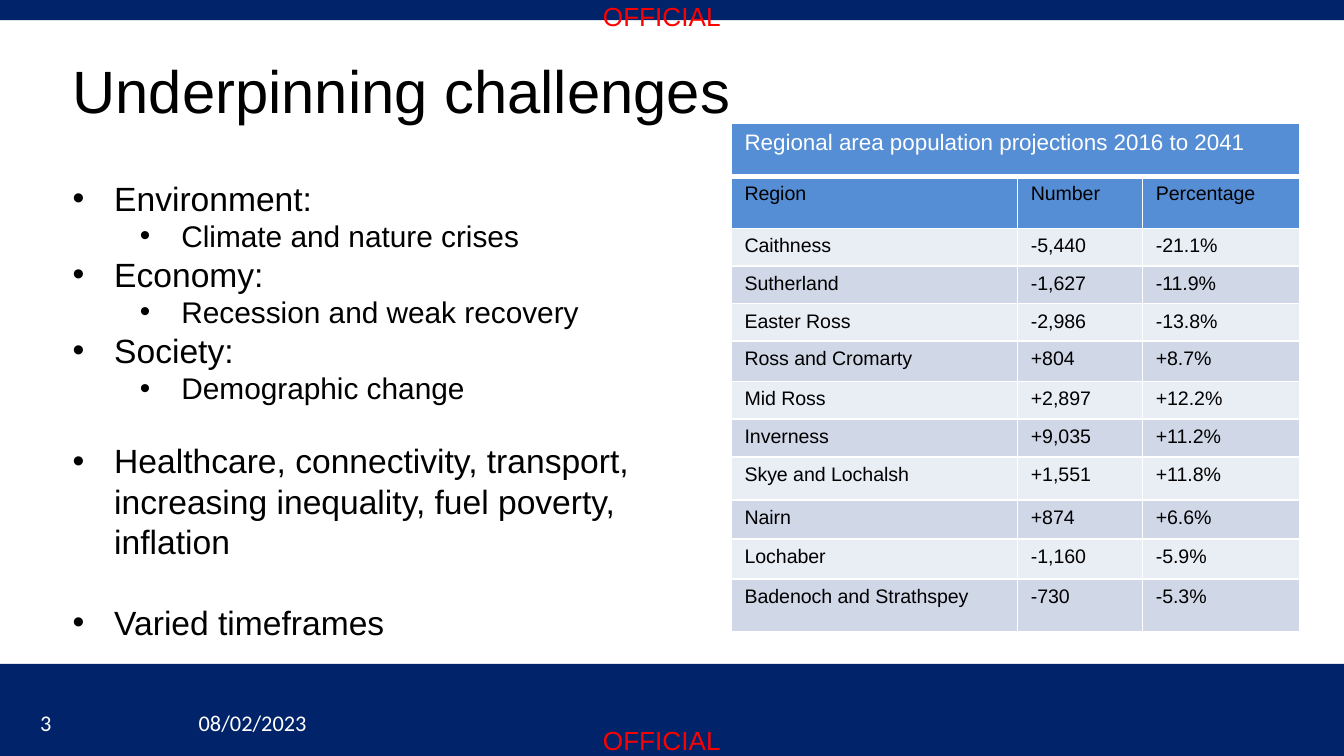
from lxml.etree import SubElement
from pptx import Presentation
from pptx.dml.color import RGBColor
from pptx.enum.shapes import MSO_SHAPE as Shape
from pptx.enum.text import MSO_ANCHOR as Anchor, MSO_AUTO_SIZE as AutoSize, PP_ALIGN as Align
from pptx.oxml.ns import qn
from pptx.util import Inches, Pt

COLORS = {
    "navy": "012369",
    "white": "FFFFFF",
    "black": "000000",
    "red": "FF0000",
    "header": "558ED5",
    "light": "E9EDF4",
    "dark": "D0D8E8",
}
BULLETS = [
    ("Environment:", 0, 0),
    ("Climate and nature crises", 1, 0),
    ("Economy:", 0, 0),
    ("Recession and weak recovery", 1, 0),
    ("Society:", 0, 0),
    ("Demographic change", 1, 0),
    ("Healthcare, connectivity, transport, increasing inequality, fuel poverty, inflation", 0, 18.5),
    ("Varied timeframes", 0, 21.5),
]
TABLE_TITLE = "Regional area population projections 2016 to 2041"
REGIONS = [
    ("Region", "Number", "Percentage"),
    ("Caithness", "-5,440", "-21.1%"),
    ("Sutherland", "-1,627", "-11.9%"),
    ("Easter Ross", "-2,986", "-13.8%"),
    ("Ross and Cromarty", "+804", "+8.7%"),
    ("Mid Ross", "+2,897", "+12.2%"),
    ("Inverness", "+9,035", "+11.2%"),
    ("Skye and Lochalsh", "+1,551", "+11.8%"),
    ("Nairn", "+874", "+6.6%"),
    ("Lochaber", "-1,160", "-5.9%"),
    ("Badenoch and Strathspey", "-730", "-5.3%"),
]
COLUMN_WIDTHS = [2.13, 0.93, 1.17]
ROW_HEIGHTS = [0.39, 0.39, 0.28, 0.28, 0.28, 0.3, 0.28, 0.28, 0.32, 0.29, 0.3, 0.39]


def rgb(name):
    return RGBColor.from_string(COLORS[name])


def write(para, text, size=18, font="Arial", color="black", align=Align.LEFT):
    para.alignment = align
    span = para.add_run()
    span.text = text
    span.font.size = Pt(size)
    span.font.name = font
    span.font.color.rgb = rgb(color)


def add_band(slide, top, height, color):
    band = slide.shapes.add_shape(Shape.RECTANGLE, 0, Inches(top), Inches(10), Inches(height))
    band.shadow.inherit = False
    band.fill.solid()
    band.fill.fore_color.rgb = rgb(color)
    band.line.fill.background()


def add_label(slide, text, left, top, width, height, inset=True, **style):
    box = slide.shapes.add_textbox(Inches(left), Inches(top), Inches(width), Inches(height))
    frame = box.text_frame
    frame.word_wrap = True
    if not inset:
        frame.margin_left = frame.margin_right = frame.margin_top = frame.margin_bottom = 0
    write(frame.paragraphs[0], text, **style)


def place(slide, holder, left, top, width, height):
    slide.shapes._spTree.append(holder._element)
    holder.left, holder.top = Inches(left), Inches(top)
    holder.width, holder.height = Inches(width), Inches(height)
    frame = holder.text_frame
    frame.word_wrap = True
    frame.auto_size = AutoSize.NONE
    frame.vertical_anchor = Anchor.TOP
    return frame


def add_bullet(para, text, level, gap):
    para.level = level
    para.line_spacing = 1.0
    para.space_before = Pt(gap)
    props = para._p.get_or_add_pPr()
    props.set("marL", str(Inches(0.31 + 0.5 * level)))
    props.set("indent", str(-Inches(0.31)))
    SubElement(props, qn("a:buFont"), typeface="Arial")
    SubElement(props, qn("a:buChar"), char="•")
    write(para, text, size=16 if level else 18)


def set_borders(cell, top=1, bottom=1):
    props = cell._tc.get_or_add_tcPr()
    for side, width in (("L", 1), ("R", 1), ("T", top), ("B", bottom)):
        line = SubElement(props, qn(f"a:ln{side}"), w=str(Pt(width)))
        fill = SubElement(line, qn("a:solidFill"))
        SubElement(fill, qn("a:srgbClr"), val=COLORS["white"])


def fill_cell(cell, text, fill, top=1, bottom=1, **style):
    set_borders(cell, top, bottom)
    cell.fill.solid()
    cell.fill.fore_color.rgb = rgb(fill)
    if text:
        write(cell.text_frame.paragraphs[0], text, **style)


def add_population_table(slide):
    table = slide.shapes.add_table(
        len(ROW_HEIGHTS), len(COLUMN_WIDTHS), Inches(5.44), Inches(0.92),
        Inches(sum(COLUMN_WIDTHS)), Inches(sum(ROW_HEIGHTS))).table
    for column, width in zip(table.columns, COLUMN_WIDTHS):
        column.width = Inches(width)
    for row, height in zip(table.rows, ROW_HEIGHTS):
        row.height = Inches(height)
    table.cell(0, 0).merge(table.cell(0, 2))
    for c, text in enumerate((TABLE_TITLE, "", "")):
        fill_cell(table.cell(0, c), text, "header", bottom=3, size=12, color="white")
    for r, values in enumerate(REGIONS, 1):
        fill = "header" if r == 1 else ("light", "dark")[r % 2]
        for c, text in enumerate(values):
            fill_cell(table.cell(r, c), text, fill, top=3 if r == 1 else 1, size=10.5)


def main():
    deck = Presentation()
    deck.slide_width = Inches(10)
    deck.slide_height = deck.slide_width * 9 // 16
    slide = deck.slides.add_slide(deck.slide_layouts[1])
    title, body = slide.placeholders

    add_band(slide, 4.94, 0.69, "navy")
    add_band(slide, 0, 1.28, "white")
    add_band(slide, 0, 0.15, "navy")
    for top in (0, 5.39):
        add_label(slide, "OFFICIAL", 4.46, top, 0.93, 0.23, inset=False,
                  size=14, color="red", align=Align.CENTER)
    for text, left, width in (("08/02/2023", 1.38, 1.26), ("3", 0.2, 1.07)):
        add_label(slide, text, left, 5.23, width, 0.3, size=12, font="Calibri", color="white")

    frame = place(slide, body, 0.44, 1.27, 4.91, 3.87)
    for i, bullet in enumerate(BULLETS):
        add_bullet(frame.add_paragraph() if i else frame.paragraphs[0], *bullet)
    frame = place(slide, title, 0.44, 0.35, 9.23, 0.64)
    write(frame.paragraphs[0], "Underpinning challenges", size=32)
    add_population_table(slide)
    deck.save("out.pptx")


if __name__ == "__main__":
    main()
